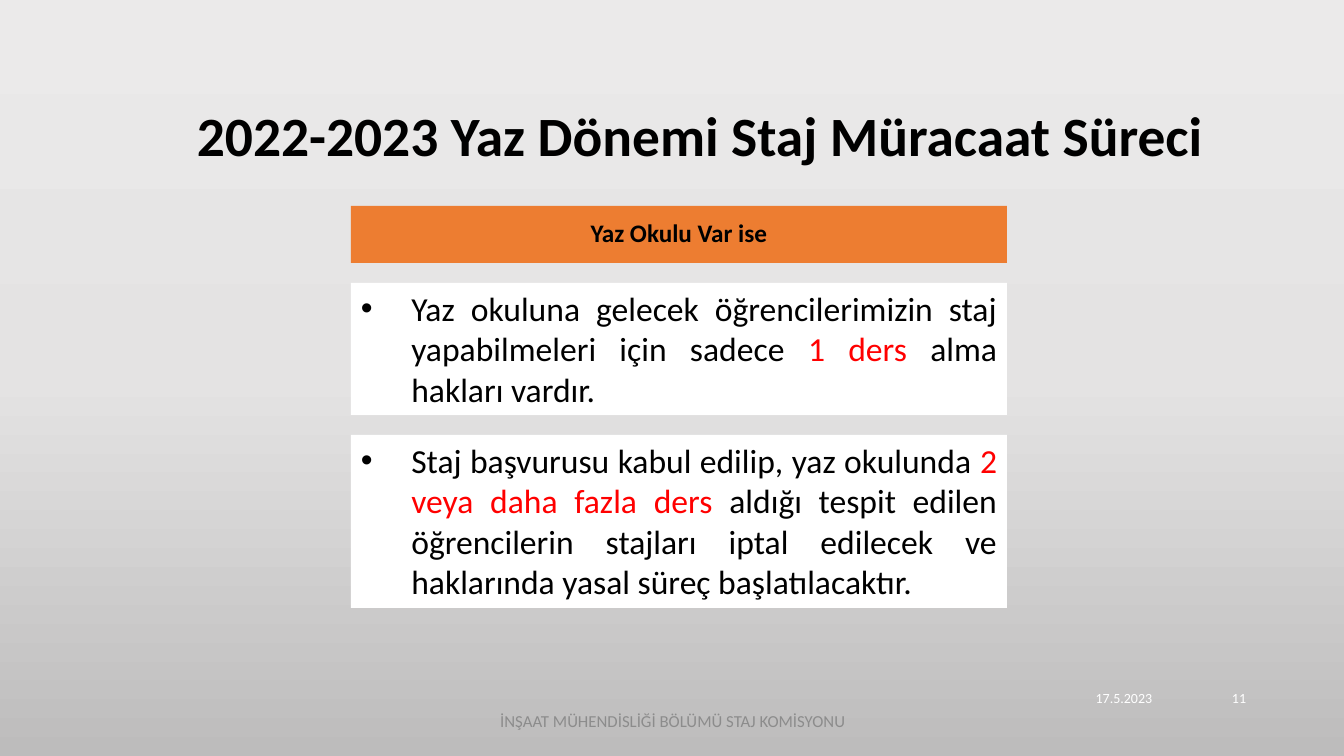
from copy import deepcopy

from lxml import etree
from pptx import Presentation
from pptx import util as u
from pptx.dml.color import RGBColor
from pptx.enum import shapes, text
from pptx.oxml.ns import qn

EMU_PER_PX = 6858000 / 756
SLIDE_SIZE = 1344, 756

BLACK = RGBColor(0x00, 0x00, 0x00)
WHITE = RGBColor(0xFF, 0xFF, 0xFF)
RED = RGBColor(0xFF, 0x00, 0x00)
ORANGE = RGBColor(0xED, 0x7D, 0x31)
GRAY = RGBColor(0x8C, 0x8C, 0x8C)
BACKGROUND = [
    (0, RGBColor(0xEB, 0xEA, 0xEA)),
    (0.5, RGBColor(0xE4, 0xE3, 0xE3)),
    (1, RGBColor(0xBD, 0xBC, 0xBC)),
]

PANEL_LEFT, PANEL_WIDTH, PANEL_GAP = 351, 656, 20
HEADER_TOP, HEADER_HEIGHT = 206, 57
RULES = [
    (132, [("Yaz okuluna gelecek öğrencilerimizin staj yapabilmeleri için sadece ", BLACK),
           ("1 ders ", RED),
           ("alma hakları vardır.", BLACK)]),
    (173, [("Staj başvurusu kabul edilip, yaz okulunda ", BLACK),
           ("2 veya daha fazla ders ", RED),
           ("aldığı tespit edilen öğrencilerin stajları iptal edilecek ve "
            "haklarında yasal süreç başlatılacaktır.", BLACK)]),
]


def px(length):
    return u.Emu(round(length * EMU_PER_PX))


class SlideBuilder:
    """Holds the font and the slide that elements are added to."""

    font_name = "Calibri"

    def __init__(self, presentation):
        self.slide = presentation.slides.add_slide(presentation.slide_layouts[6])

    def gradient_background(self, stops):
        fill = self.slide.background.fill
        fill.gradient()
        fill.gradient_angle = 270
        stop_list = self.slide.element.find(".//" + qn("a:gsLst"))
        while len(stop_list) < len(stops):
            stop_list.append(deepcopy(stop_list[-1]))
        for stop, (position, color) in zip(fill.gradient_stops, stops):
            stop.position = position
            stop.color.rgb = color

    def set_font(self, paragraph, size, color=None, bold=False):
        font = paragraph.font
        font.name, font.size, font.bold = self.font_name, u.Pt(size), bold
        if color is not None:
            font.color.rgb = color

    def label(self, box, words, size, color, align, bold=False, line_spacing=None):
        shape = self.slide.shapes.add_textbox(*map(px, box))
        frame = shape.text_frame
        frame.word_wrap = True
        frame.vertical_anchor = text.MSO_ANCHOR.MIDDLE
        paragraph = frame.paragraphs[0]
        paragraph.text = words
        paragraph.alignment = align
        paragraph.line_spacing = line_spacing
        self.set_font(paragraph, size, color, bold)

    def panel(self, box, fill, anchor):
        """Add a borderless filled rectangle and return its text frame."""
        shape = self.slide.shapes.add_shape(shapes.MSO_SHAPE.RECTANGLE, *map(px, box))
        shape.shadow.inherit = False
        shape.fill.solid()
        shape.fill.fore_color.rgb = fill
        shape.line.fill.background()
        shape.text_frame.word_wrap = True
        shape.text_frame.vertical_anchor = anchor
        return shape.text_frame

    def header(self, box, words):
        paragraph = self.panel(box, ORANGE, text.MSO_ANCHOR.MIDDLE).paragraphs[0]
        paragraph.text = words
        paragraph.alignment = text.PP_ALIGN.CENTER
        paragraph.line_spacing = 0.9
        self.set_font(paragraph, 18, BLACK, bold=True)

    def bullet_panel(self, box, runs):
        paragraph = self.panel(box, WHITE, text.MSO_ANCHOR.TOP).paragraphs[0]
        paragraph.alignment = text.PP_ALIGN.JUSTIFY
        properties = paragraph._p.get_or_add_pPr()
        indent = u.Inches(0.5)
        properties.set("marL", str(indent))
        properties.set("indent", str(-indent))
        etree.SubElement(properties, qn("a:buFont"), typeface="Arial")
        etree.SubElement(properties, qn("a:buChar"), char="•")
        self.set_font(paragraph, 24)
        for words, color in runs:
            run = paragraph.add_run()
            run.text = words
            run.font.color.rgb = color


def main():
    presentation = Presentation()
    presentation.slide_width, presentation.slide_height = map(px, SLIDE_SIZE)
    builder = SlideBuilder(presentation)
    builder.gradient_background(BACKGROUND)

    builder.header((PANEL_LEFT, HEADER_TOP, PANEL_WIDTH, HEADER_HEIGHT), "Yaz Okulu Var ise")
    top = HEADER_TOP + HEADER_HEIGHT + PANEL_GAP
    for height, runs in RULES:
        builder.bullet_panel((PANEL_LEFT, top, PANEL_WIDTH, height), runs)
        top += height + PANEL_GAP

    align = text.PP_ALIGN
    builder.label((187, 107, 1157, 68), "2022-2023 Yaz Dönemi Staj Müracaat Süreci",
                  39.6, BLACK, align.LEFT, bold=True, line_spacing=0.8)
    builder.label((851, 680, 311, 35), "17.5.2023", 10, WHITE, align.RIGHT)
    builder.label((446, 701, 454, 40), "İNŞAAT MÜHENDİSLİĞİ BÖLÜMÜ STAJ KOMİSYONU",
                  12, GRAY, align.CENTER)
    builder.label((1180, 680, 76, 35), "11", 10, WHITE, align.RIGHT)
    presentation.save("out.pptx")


if __name__ == "__main__":
    main()
